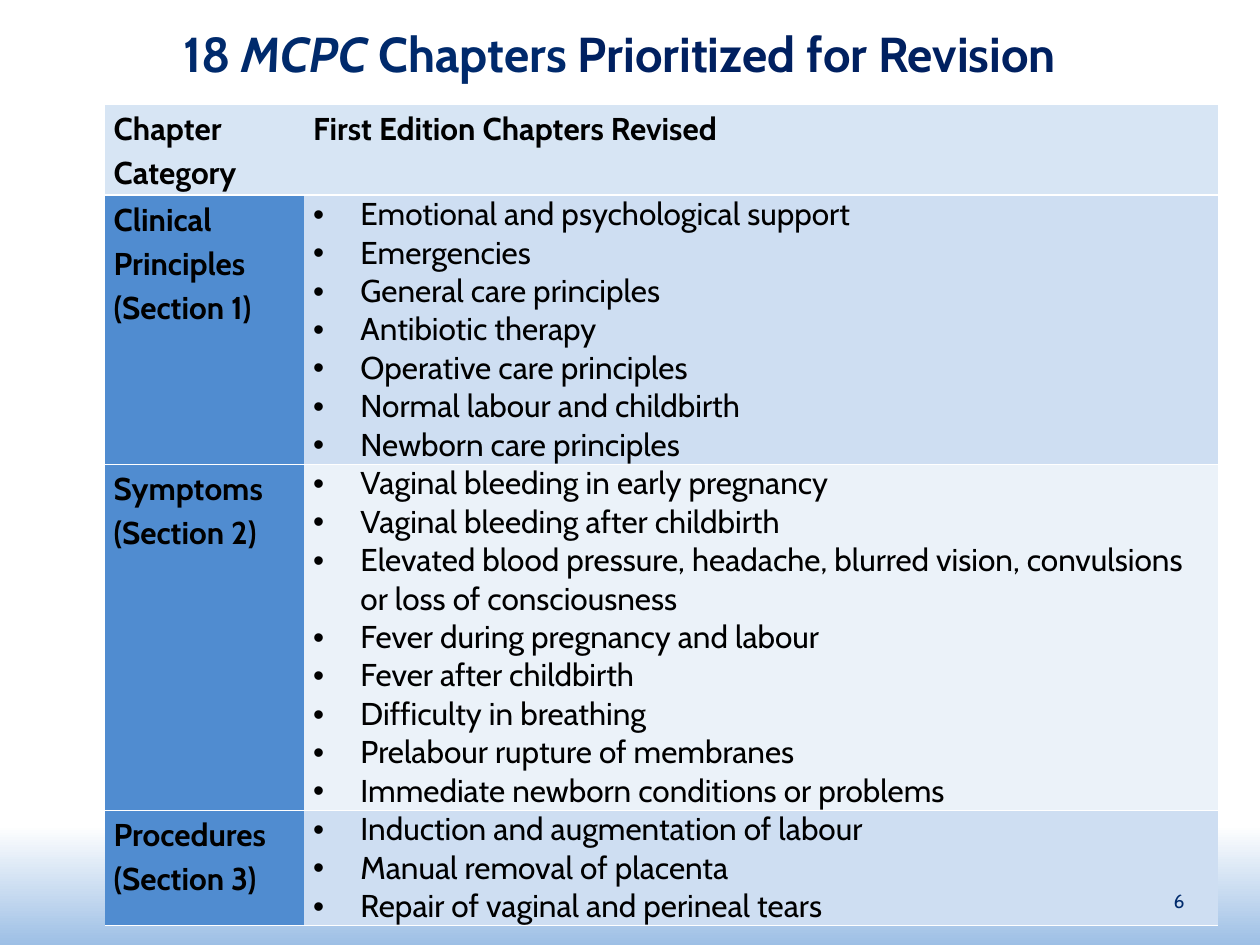
from lxml import etree
from pptx import Presentation
from pptx.dml.color import RGBColor
from pptx.enum import shapes, text
from pptx.oxml import ns
from pptx.util import Pt

FONT = "Cabin"
NAVY, BLACK, WHITE = "002A6C", "000000", "FFFFFF"
HEADER_FILL, CATEGORY_FILL = "D7E5F4", "508CD0"
HEADERS = ["Chapter Category", "First Edition Chapters Revised"]
SECTIONS = [
    (["Clinical", "Principles (Section 1)"], "CEDEF2", [
        "Emotional and psychological support",
        "Emergencies",
        "General care principles",
        "Antibiotic therapy",
        "Operative care principles",
        "Normal labour and childbirth",
        "Newborn care principles"]),
    (["Symptoms", "(Section 2)"], "EBF2F9", [
        "Vaginal bleeding in early pregnancy",
        "Vaginal bleeding after childbirth",
        "Elevated blood pressure, headache, blurred vision, convulsions or loss of consciousness",
        "Fever during pregnancy and labour",
        "Fever after childbirth",
        "Difficulty in breathing",
        "Prelabour rupture of membranes",
        "Immediate newborn conditions or problems"]),
    (["Procedures", "(Section 3)"], "CEDEF2", [
        "Induction and augmentation of labour",
        "Manual removal of placenta",
        "Repair of vaginal and perineal tears"]),
]


def rgb(color):
    """Turn a hex string into a colour."""
    return RGBColor.from_string(color)


def add_run(p, words, size, color, bold=False, italic=False):
    """Add one formatted run to a paragraph."""
    r = p.add_run()
    r.text = words
    f = r.font
    f.name, f.size, f.bold, f.italic = FONT, Pt(size), bold, italic
    f.color.rgb = rgb(color)


def add_bullet(p, indent):
    """Give a paragraph a hanging round bullet."""
    pPr = p._p.get_or_add_pPr()
    pPr.set("marL", str(Pt(indent)))
    pPr.set("indent", str(-Pt(indent)))
    etree.SubElement(pPr, ns.qn("a:buFont")).set("typeface", "Arial")
    etree.SubElement(pPr, ns.qn("a:buChar")).set("char", "•")


def add_rules(cell):
    """Draw white rules above and below a cell and none at its sides."""
    tcPr = cell._tc.get_or_add_tcPr()
    for side in ("lnL", "lnR", "lnT", "lnB"):
        ln = etree.SubElement(tcPr, ns.qn(f"a:{side}"), w=str(Pt(1)))
        if side in ("lnL", "lnR"):
            etree.SubElement(ln, ns.qn("a:noFill"))
        else:
            fill = etree.SubElement(ln, ns.qn("a:solidFill"))
            etree.SubElement(fill, ns.qn("a:srgbClr")).set("val", WHITE)


def fill_cell(cell, lines, color, bulleted=False):
    """Write a cell as bold headings or as a bulleted list."""
    add_rules(cell)
    cell.fill.solid()
    cell.fill.fore_color.rgb = rgb(color)
    cell.margin_left = cell.margin_right = Pt(5)
    cell.margin_top = cell.margin_bottom = Pt(0)
    tf = cell.text_frame
    for i, line in enumerate(lines):
        p = tf.add_paragraph() if i else tf.paragraphs[0]
        if bulleted:
            add_bullet(p, 27)
        else:
            p.line_spacing = 1.15
        add_run(p, line, 18, BLACK, bold=not bulleted)


def add_backdrop(s, x, y, w, h):
    """Shade the foot of the slide from white to blue."""
    sp = s.shapes.add_shape(shapes.MSO_SHAPE.RECTANGLE, Pt(x), Pt(y), Pt(w), Pt(h))
    sp.shadow.inherit = False
    sp.line.fill.background()
    sp.fill.gradient()
    sp.fill.gradient_angle = 270
    for stop, (position, color) in zip(sp.fill.gradient_stops, [(0.8, WHITE), (1, "9DBFE5")]):
        stop.position = position
        stop.color.rgb = rgb(color)


def set_title(s, x, y, w, h):
    """Place and write the slide title."""
    sp = s.shapes.title
    sp.left, sp.top, sp.width, sp.height = Pt(x), Pt(y), Pt(w), Pt(h)
    tf = sp.text_frame
    tf.vertical_anchor = text.MSO_ANCHOR.MIDDLE
    p = tf.paragraphs[0]
    p.alignment = text.PP_ALIGN.CENTER
    for words, color, italic in [("18 ", NAVY, False), ("MCPC", NAVY, True),
                                 (" Chapters ", NAVY, False),
                                 ("Prioritized for Revision", "002060", False)]:
        add_run(p, words, 28, color, True, italic)


def add_chapter_table(s, x, y, w, h):
    """Build the table of revised chapters by category."""
    table = s.shapes.add_table(len(SECTIONS) + 1, 2, Pt(x), Pt(y), Pt(w), Pt(h)).table
    table.first_row = table.horz_banding = False
    category_width = 114
    table.columns[0].width = Pt(category_width)
    table.columns[1].width = Pt(w - category_width)
    for row, height in zip(table.rows, [52, 151, 194, 65]):
        row.height = Pt(height)
    for col, header in enumerate(HEADERS):
        fill_cell(table.cell(0, col), [header], HEADER_FILL)
    for row, (category, color, chapters) in enumerate(SECTIONS, 1):
        fill_cell(table.cell(row, 0), category, CATEGORY_FILL)
        fill_cell(table.cell(row, 1), chapters, color, bulleted=True)


def add_page_number(s, x, y, w, h):
    """Write the page number at the lower right."""
    tf = s.shapes.add_textbox(Pt(x), Pt(y), Pt(w), Pt(h)).text_frame
    tf.word_wrap = True
    tf.vertical_anchor = text.MSO_ANCHOR.MIDDLE
    p = tf.paragraphs[0]
    p.alignment = text.PP_ALIGN.RIGHT
    add_run(p, "6", 11, NAVY)


def main():
    """Build and save the slide."""
    prs = Presentation()
    prs.slide_width, prs.slide_height = Pt(720), Pt(540)
    s = prs.slides.add_slide(prs.slide_layouts[5])
    add_backdrop(s, 0, 198, 720, 342)
    title = s.shapes.title._element
    title.getparent().append(title)
    set_title(s, 30, 12, 648, 36)
    add_chapter_table(s, 60, 59.5, 636, 462)
    add_page_number(s, 516, 500.5, 168, 29)
    prs.save("out.pptx")


if __name__ == "__main__":
    main()
